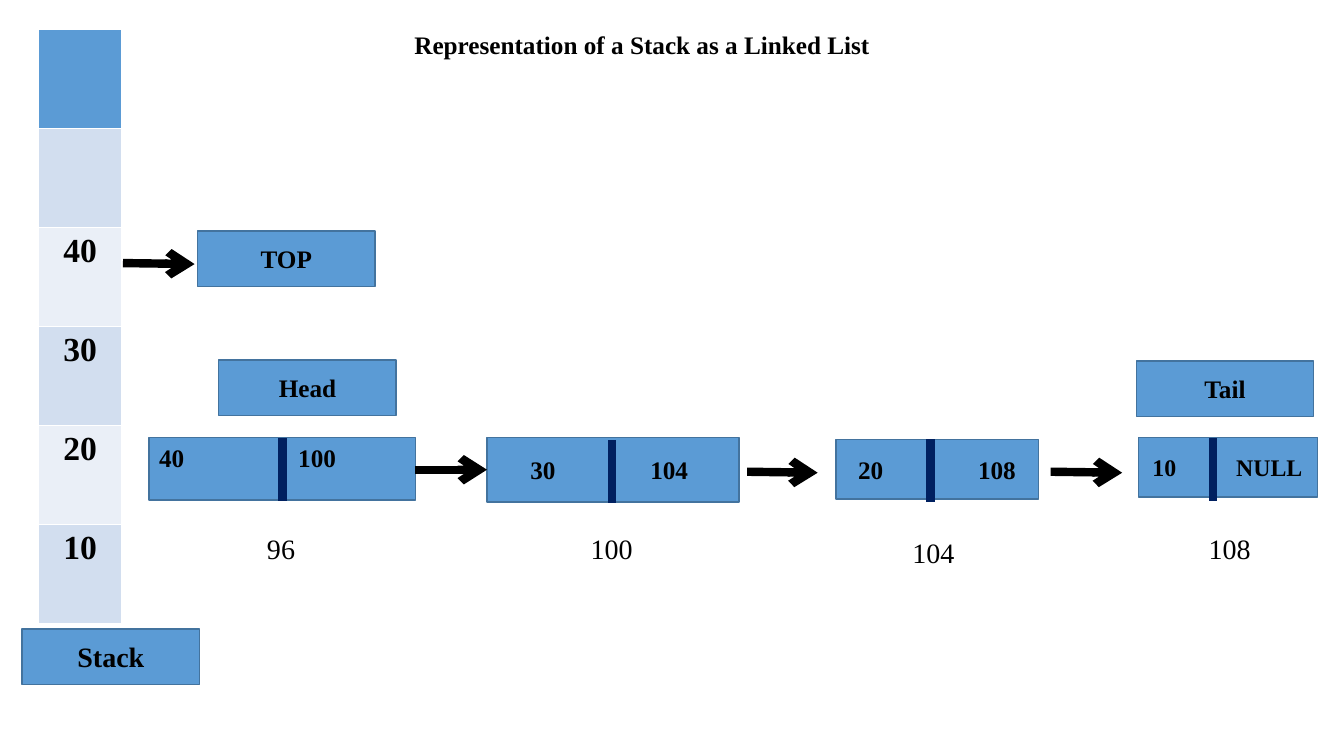
from collections import namedtuple

from lxml.etree import SubElement
from pptx import Presentation
from pptx.dml.color import RGBColor
from pptx.enum.shapes import MSO_CONNECTOR as Connector, MSO_SHAPE as Preset
from pptx.enum.text import MSO_ANCHOR as Anchor, MSO_AUTO_SIZE as AutoSize, PP_ALIGN as Align
from pptx.oxml.ns import qn
from pptx.util import Inches, Pt

COLORS = {
    "blue": "5B9BD5",
    "outline": "43739E",
    "odd_row": "D2DEEF",
    "even_row": "EAEFF7",
    "divider": "002060",
    "black": "000000",
}
FONT = "Times New Roman"

Box = namedtuple("Box", "left top width height")
Node = namedtuple("Node", "box value link indent tab size anchor divider divider_top address label_left label_top")

STACK_VALUES = ["", "", "40", "30", "20", "10"]
NODES = [
    Node(Box(1.48, 4.34, 2.64, 0.62), "40", "100", 0.1, 1.38, 18, Anchor.TOP, 1.32, 0.01, "96", 1.07, 0.88),
    Node(Box(4.83, 4.34, 2.5, 0.64), "30", "104", 0.43, 1.19, 18, Anchor.MIDDLE, 1.24, 0.03, "100", 0.93, 0.88),
    Node(Box(8.29, 4.36, 2.01, 0.59), "20", "108", 0.22, 1.19, 18, Anchor.MIDDLE, 0.94, 0, "104", 0.66, 0.9),
    Node(Box(11.29, 4.34, 1.78, 0.59), "10", "NULL", 0.14, 0.83, 17, Anchor.MIDDLE, 0.74, 0.01, "108", 0.6, 0.88),
]
NODE_ARROWS = [(4.12, 4.66, 4.83, 4.66), (7.41, 4.68, 8.11, 4.69), (10.42, 4.68, 11.13, 4.69)]
POINTER_SIZE = (1.76, 0.55)
POINTERS = [
    ("TOP", 1.96, 2.29, 18),
    ("Head", 2.17, 3.57, 18),
    ("Tail", 11.27, 3.58, 18),
    ("Stack", 0.22, 6.24, 20),
]


def color(name):
    return RGBColor.from_string(COLORS[name])


def inches(box):
    return [Inches(length) for length in box]


def write(frame, text, size, bold=True, align=Align.LEFT):
    paragraph = frame.paragraphs[0]
    paragraph.alignment = align
    run = paragraph.add_run()
    run.text = text
    run.font.name = FONT
    run.font.size = Pt(size)
    run.font.bold = bold
    run.font.color.rgb = color("black")
    return paragraph


def add_line(slide, start_left, start_top, end_left, end_top, line_color, arrow=False):
    connector = slide.shapes.add_connector(
        Connector.STRAIGHT, *inches((start_left, start_top, end_left, end_top)))
    connector.line.color.rgb = color(line_color)
    connector.line.width = Pt(6)
    if arrow:
        SubElement(connector.get_or_add_ln(), qn("a:tailEnd"), type="arrow")
    SubElement(connector.element.spPr, qn("a:effectLst"))


def add_block(slide, box):
    shape = slide.shapes.add_shape(Preset.RECTANGLE, *inches(box))
    shape.shadow.inherit = False
    shape.fill.solid()
    shape.fill.fore_color.rgb = color("blue")
    shape.line.color.rgb = color("outline")
    shape.line.width = Pt(1)
    frame = shape.text_frame
    frame.word_wrap = True
    frame.vertical_anchor = Anchor.MIDDLE
    return frame


def add_title(slide, box, text):
    title = slide.shapes.title
    title.left, title.top, title.width, title.height = inches(box)
    frame = title.text_frame
    frame.word_wrap = False
    frame.auto_size = AutoSize.SHAPE_TO_FIT_TEXT
    frame.vertical_anchor = Anchor.TOP
    write(frame, text, 18)


def add_stack(slide, box, values):
    table = slide.shapes.add_table(len(values), 1, *inches(box)).table
    for index, value in enumerate(values):
        table.rows[index].height = Inches(box.height / len(values))
        cell = table.cell(index, 0)
        cell.fill.solid()
        band = "odd_row" if index % 2 else "even_row"
        cell.fill.fore_color.rgb = color(band if index else "blue")
        if value:
            write(cell.text_frame, value, 24, align=Align.CENTER)


def add_pointer(slide, box, text, size):
    write(add_block(slide, box), text, size, align=Align.CENTER)


def add_node(slide, node):
    box = node.box
    frame = add_block(slide, box)
    frame.vertical_anchor = node.anchor
    frame.margin_left = Inches(node.indent)
    frame.margin_right = 0
    paragraph = write(frame, f"{node.value}\t{node.link}", node.size)
    tabs = SubElement(paragraph._p.get_or_add_pPr(), qn("a:tabLst"))
    SubElement(tabs, qn("a:tab"), pos=str(Inches(node.tab)), algn="l")

    divider_left = box.left + node.divider
    divider_top = box.top + node.divider_top
    add_line(slide, divider_left, divider_top, divider_left, divider_top + 0.62, "divider")

    label_box = Box(box.left + node.label_left, box.top + node.label_top, 1.44, 0.44)
    label = slide.shapes.add_textbox(*inches(label_box)).text_frame
    label.word_wrap = True
    label.auto_size = AutoSize.SHAPE_TO_FIT_TEXT
    write(label, node.address, 20, bold=False)


def add_linked_list(slide, nodes, arrows):
    for node in nodes:
        add_node(slide, node)
    for arrow in arrows:
        add_line(slide, *arrow, "black", arrow=True)


def main():
    presentation = Presentation()
    presentation.slide_width = Inches(13.33)
    presentation.slide_height = Inches(7.5)
    slide = presentation.slides.add_slide(presentation.slide_layouts[5])
    add_title(slide, Box(4.01, 0.24, 4.76, 0.4), "Representation of a Stack as a Linked List")
    add_stack(slide, Box(0.38, 0.29, 0.83, 5.9), STACK_VALUES)
    add_linked_list(slide, NODES, NODE_ARROWS)
    for text, left, top, size in POINTERS:
        add_pointer(slide, Box(left, top, *POINTER_SIZE), text, size)
    add_line(slide, 1.22, 2.61, 1.93, 2.62, "black", arrow=True)
    presentation.save("out.pptx")


if __name__ == "__main__":
    main()
